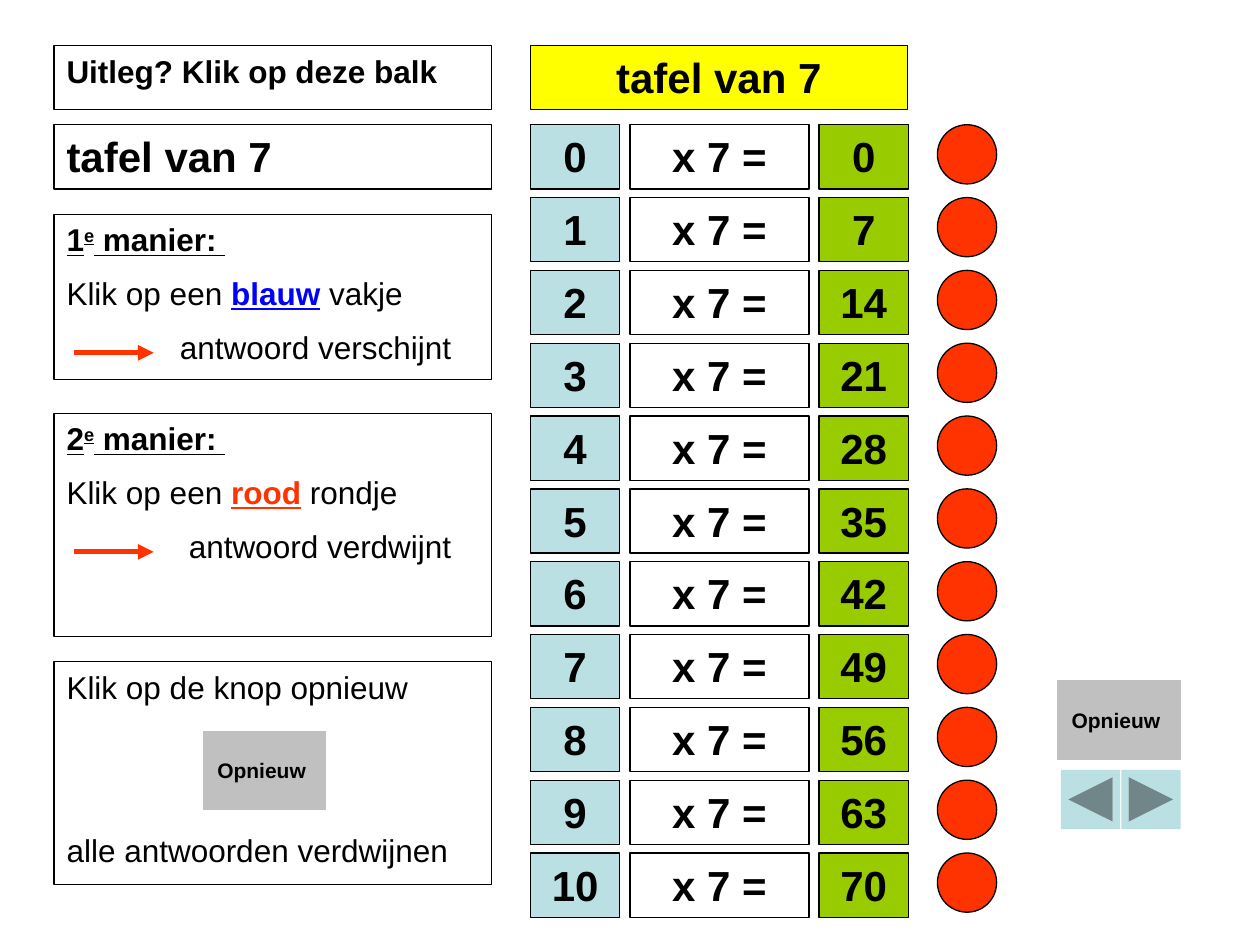
from dataclasses import dataclass

from lxml.etree import SubElement
from pptx import Presentation as Deck
from pptx.dml.color import RGBColor as Color
from pptx.enum.shapes import MSO_CONNECTOR as Link, MSO_SHAPE as Form
from pptx.enum.text import MSO_ANCHOR as Anchor, PP_ALIGN as Align
from pptx.oxml.ns import qn
from pptx.util import Inches, Pt


@dataclass(frozen=True)
class Theme:
    font: str = "Arial"
    ink: str = "000000"
    white: str = "FFFFFF"
    green: str = "99CC00"
    pale: str = "BBE0E3"
    yellow: str = "FFFF00"
    red: str = "FF3300"
    blue: str = "0000FF"
    gray: str = "C0C0C0"
    big: int = 24
    mid: int = 18
    small: int = 12
    thin: float = 0.75
    thick: int = 3


THEME = Theme()


def put(para, text, size=THEME.mid, color=THEME.ink, bold=False, under=False, lift=0):
    run = para.add_run()
    run.text = text
    font = run.font
    font.name, font.size, font.bold, font.underline = THEME.font, Pt(size), bold, under
    font.color.rgb = Color.from_string(color)
    if lift:
        font._element.set("baseline", str(lift * 1000))


class Page:
    def __init__(self, slide, theme):
        self.slide, self.theme = slide, theme

    def shape(self, form, area, fill=None, edge=True):
        item = self.slide.shapes.add_shape(form, *map(Inches, area))
        item.shadow.inherit = False
        if fill:
            item.fill.solid()
            item.fill.fore_color.rgb = Color.from_string(fill)
        else:
            item.fill.background()
        if edge:
            item.line.color.rgb = Color.from_string(self.theme.ink)
            item.line.width = Pt(self.theme.thin)
        else:
            item.line.fill.background()
        return item

    def box(self, area, lines, fill=None, align=Align.LEFT):
        frame = self.shape(Form.RECTANGLE, area, fill).text_frame
        frame.word_wrap = True
        frame.vertical_anchor = Anchor.TOP
        for spot, (parts, form) in enumerate(lines):
            para = frame.add_paragraph() if spot else frame.paragraphs[0]
            para.alignment = align
            props = para._p.get_or_add_pPr()
            if "gap" in form:
                para.space_before = Pt(form["gap"])
            else:
                space = SubElement(props, qn("a:spcBef"))
                SubElement(space, qn("a:spcPct")).set("val", "50000")
            if "indent" in form:
                props.set("marL", str(Inches(form["indent"])))
                props.set("indent", "0")
            for text, style in parts:
                put(para, text, **style)

    def cell(self, area, text, fill=None, align=Align.CENTER, size=THEME.big):
        self.box(area, [([(text, dict(size=size, bold=True))], {})], fill, align)

    def reset(self, left, top):
        area = (left, top, 0.98, 0.63)
        frame = self.shape(Form.ACTION_BUTTON_CUSTOM, area, self.theme.gray, False).text_frame
        frame.word_wrap = False
        frame.vertical_anchor = Anchor.MIDDLE
        para = frame.paragraphs[0]
        para.alignment = Align.CENTER
        put(para, "Opnieuw ", size=self.theme.small, bold=True)

    def arrow(self, left, top, width):
        ends = map(Inches, (left, top, left + width, top))
        item = self.slide.shapes.add_connector(Link.STRAIGHT, *ends)
        item.line.color.rgb = Color.from_string(self.theme.red)
        item.line.width = Pt(self.theme.thick)
        SubElement(item.line._get_or_add_ln(), qn("a:tailEnd")).set("type", "triangle")
        SubElement(item._element.spPr, qn("a:effectLst"))

    def method(self, top, height, count, word, color, thing, result, indent):
        head = dict(bold=True, under=True)
        self.box((0.43, top, 3.47, height), [
            ([(count, head), ("e", dict(head, lift=30)), (" manier: ", head)], {}),
            ([("Klik op een ", {}), (word, dict(head, color=color)), (thing, {})], {}),
            ([(result, {})], dict(indent=indent)),
        ])
        self.arrow(0.59, top + 1.1, 0.63)


def main():
    deck = Deck()
    deck.slide_width, deck.slide_height = Inches(10), Inches(7.5)
    page = Page(deck.slides.add_slide(deck.slide_layouts[6]), THEME)

    table, first, last, tall = 7, 0.99, 6.77, 0.51
    step = (last - first) / 10
    page.cell((4.21, 0.36, 2.99, tall), f"tafel van {table}", THEME.yellow)
    for num in range(11):
        top = first + num * step
        page.cell((4.21, top, 0.71, tall), str(num), THEME.pale)
        page.cell((5, top, 1.42, tall), f"x {table} =", THEME.white)
        page.cell((6.5, top, 0.71, tall), str(num * table), THEME.green)
        page.shape(Form.OVAL, (7.44, top, 0.47, 0.47), THEME.red)

    page.cell((0.43, 0.36, 3.47, tall), "Uitleg? Klik op deze balk",
              align=Align.LEFT, size=THEME.mid)
    page.cell((0.43, first, 3.47, tall), f"tafel van {table}", align=Align.LEFT)
    page.method(1.7, 1.31, "1", "blauw", THEME.blue, " vakje", "antwoord verschijnt", 0.9)
    page.method(3.28, 1.77, "2", "rood", THEME.red, " rondje", "antwoord verdwijnt", 0.97)
    page.box((0.43, 5.25, 3.47, 1.77), [
        ([("Klik op de knop opnieuw", {})], {}),
        ([("alle antwoorden verdwijnen", {})], dict(gap=71.5)),
    ])
    page.reset(1.61, 5.8)
    page.reset(8.39, 5.4)
    for left, form in ((8.42, Form.ACTION_BUTTON_BACK_OR_PREVIOUS),
                       (8.9, Form.ACTION_BUTTON_FORWARD_OR_NEXT)):
        page.shape(form, (left, 6.11, 0.47, 0.47), THEME.pale, False)

    deck.save("out.pptx")


if __name__ == "__main__":
    main()
